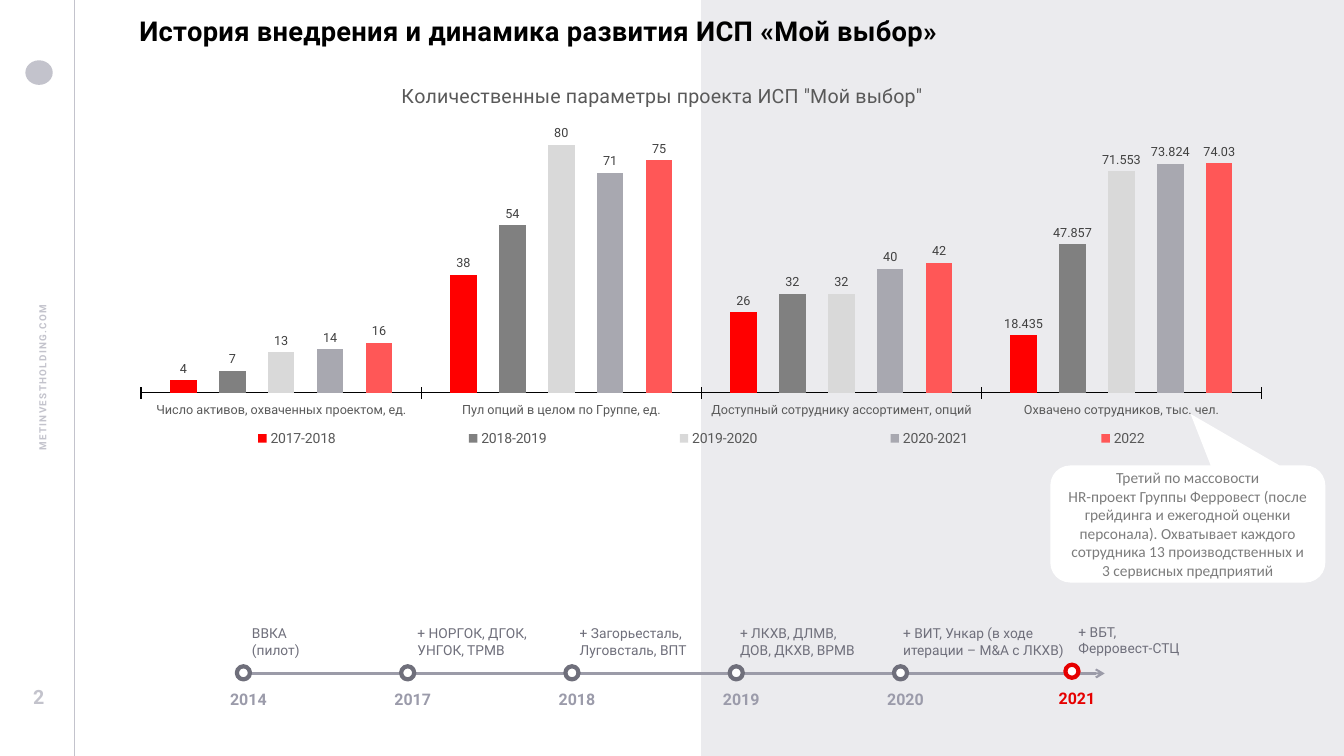
import dataclasses

import pptx
import pptx.chart.data
import pptx.dml.color
import pptx.enum.chart
import pptx.enum.shapes
import pptx.enum.text
import pptx.oxml.ns
import pptx.oxml.xmlchemy
import pptx.util

Cm = pptx.util.Cm
Pt = pptx.util.Pt
qn = pptx.oxml.ns.qn
new_element = pptx.oxml.xmlchemy.OxmlElement
Align = pptx.enum.text.PP_ALIGN
Anchor = pptx.enum.text.MSO_ANCHOR
Shape = pptx.enum.shapes.MSO_SHAPE

COLOURS = {
    "white": "FFFFFF", "black": "000000", "band": "EBEBEE", "side": "C3C3CC",
    "year": "9B9BAA", "note": "6F6F7B", "axis": "9B9BA8", "current": "E60000",
    "callout": "7C7C7C", "chart text": "595959", "value": "404040",
}


@dataclasses.dataclass
class TextStyle:
    size: float
    colour: str
    bold: bool = False
    name: str = "Roboto"
    align: Align = Align.LEFT
    line_spacing: float | None = None
    tracking: int = 0


@dataclasses.dataclass
class Milestone:
    year: str
    lines: list[str]
    dot_left: float
    note_left: float
    note_width: float
    note_inset: float = 0.08
    current: bool = False


@dataclasses.dataclass
class Season:
    name: str
    values: list[float]
    colour: str


def rgb(colour: str) -> pptx.dml.color.RGBColor:
    return pptx.dml.color.RGBColor.from_string(colour)


def set_font(font, style: TextStyle) -> None:
    font.name, font.size, font.bold = style.name, Pt(style.size), style.bold
    font.color.rgb = rgb(COLOURS[style.colour])


def write(box, lines: list[str], style: TextStyle, insets: tuple[float, ...], anchor=Anchor.TOP) -> None:
    frame = box.text_frame
    frame.word_wrap = True
    frame.auto_size = pptx.enum.text.MSO_AUTO_SIZE.NONE
    frame.vertical_anchor = anchor
    frame.margin_left, frame.margin_top, frame.margin_right, frame.margin_bottom = map(Cm, insets)
    frame.text = "\n".join(lines)
    for para in frame.paragraphs:
        para.alignment = style.align
        if style.line_spacing:
            para.line_spacing = style.line_spacing
        set_font(para.font, style)
    if style.tracking:
        for properties in box.element.iter(qn("a:defRPr")):
            properties.set("spc", str(style.tracking))


def add_text(page, place: tuple[float, ...], lines: list[str], style: TextStyle,
             insets: tuple[float, ...] = (0, 0, 0, 0), anchor=Anchor.TOP):
    box = page.shapes.add_textbox(*map(Cm, place))
    write(box, lines, style, insets, anchor)
    return box


def add_shape(page, kind: Shape, place: tuple[float, ...], fill: str, line: str | None = None):
    shape = page.shapes.add_shape(kind, *map(Cm, place))
    shape.shadow.inherit = False
    shape.fill.solid()
    shape.fill.fore_color.rgb = rgb(COLOURS[fill])
    if line:
        shape.line.color.rgb = rgb(COLOURS[line])
        shape.line.width = Pt(3)
    else:
        shape.line.fill.background()
    return shape


def add_line(page, ends: tuple[float, ...], colour: str, width: float, arrow: bool = False) -> None:
    line = page.shapes.add_connector(pptx.enum.shapes.MSO_CONNECTOR.STRAIGHT, *map(Cm, ends))
    line.line.color.rgb = rgb(COLOURS[colour])
    line.line.width = Pt(width)
    properties = line.element.find(qn("p:spPr"))
    if arrow:
        end = new_element("a:tailEnd")
        end.set("type", "arrow")
        properties.find(qn("a:ln")).append(end)
    properties.append(new_element("a:effectLst"))


def set_layout(parent, index: int, inner: bool = False, **places: float) -> None:
    for old in parent.findall(qn("c:layout")):
        parent.remove(old)
    layout = new_element("c:layout")
    manual = new_element("c:manualLayout")
    layout.append(manual)
    settings = {"layoutTarget": "inner"} if inner else {}
    settings |= {"xMode": "edge", "yMode": "edge"} | places
    for tag, value in settings.items():
        item = new_element(f"c:{tag}")
        item.set("val", str(value))
        manual.append(item)
    parent.insert(index, layout)


def add_seasons_chart(page, categories: list[str], seasons: list[Season]) -> None:
    data = pptx.chart.data.CategoryChartData()
    data.categories = categories
    for season in seasons:
        data.add_series(season.name, season.values)
    place = map(Cm, (2.97, 1.47, 29.41, 10.03))
    kind = pptx.enum.chart.XL_CHART_TYPE.COLUMN_CLUSTERED
    chart = page.shapes.add_chart(kind, *place, data).chart
    set_font(chart.font, TextStyle(10, "black"))

    chart.has_title = True
    title = chart.chart_title.text_frame
    title.text = "Количественные параметры проекта ИСП \"Мой выбор\""
    set_font(title.paragraphs[0].font, TextStyle(14, "chart text"))

    plot = chart.plots[0]
    plot.gap_width, plot.overlap, plot.vary_by_categories = 219, -85, False
    for series, season in zip(plot.series, seasons):
        series.format.fill.solid()
        series.format.fill.fore_color.rgb = rgb(season.colour)
        labels = series.data_labels
        labels.show_value = True
        labels.position = pptx.enum.chart.XL_LABEL_POSITION.OUTSIDE_END
        set_font(labels.font, TextStyle(9, "value"))

    values = chart.value_axis
    values.visible = values.has_major_gridlines = False
    values.minimum_scale, values.maximum_scale = 0, 90
    axis = chart.category_axis
    axis.major_tick_mark = pptx.enum.chart.XL_TICK_MARK.CROSS
    axis.format.line.color.rgb = rgb(COLOURS["black"])
    axis.format.line.width = Pt(1)
    set_font(axis.tick_labels.font, TextStyle(9, "chart text"))

    chart.has_legend = True
    chart.legend.position = pptx.enum.chart.XL_LEGEND_POSITION.BOTTOM
    chart.legend.include_in_layout = False
    set_font(chart.legend.font, TextStyle(10, "chart text"))

    root = chart.element.find(qn("c:chart"))
    set_layout(root.find(qn("c:title")), 1, x=0.24, y=0.05)
    set_layout(root.find(qn("c:plotArea")), 0, inner=True, x=0.02, y=0.14, w=0.96, h=0.7)
    set_layout(root.find(qn("c:legend")), 1, x=0.01, y=0.92, w=0.98, h=0.07)


def add_milestone(page, stop: Milestone) -> None:
    lift = 0.04 if stop.current else 0
    add_shape(page, Shape.OVAL, (stop.dot_left, 16.79 - lift, 0.33, 0.33), "white",
              "current" if stop.current else "note")
    year_style = TextStyle(11.4, "current" if stop.current else "year", bold=True, line_spacing=1.3)
    add_text(page, (stop.dot_left - 0.17, 17.16 - lift, 1.37, 0.79), [stop.year], year_style,
             (0, 0.08, 0.08, 0.08))
    add_text(page, (stop.note_left, 15.67 - lift, stop.note_width, 0.99), stop.lines,
             TextStyle(9.8, "note"), (stop.note_inset, 0.08, 0.08, 0.08))


CATEGORIES = ["Число активов, охваченных проектом, ед.", "Пул опций в целом по Группе, ед.",
              "Доступный сотруднику ассортимент, опций", "Охвачено сотрудников, тыс. чел."]
SEASONS = [
    Season("2017-2018", [4, 38, 26, 18.435], "FF0000"),
    Season("2018-2019", [7, 54, 32, 47.857], "808080"),
    Season("2019-2020", [13, 80, 32, 71.553], "D9D9D9"),
    Season("2020-2021", [14, 71, 40, 73.824], "A8A8B0"),
    Season("2022", [16, 75, 42, 74.03], "FF5757"),
]
FIRST_DOT, DOT_STEP = 5.97, 4.14
MILESTONES = [
    Milestone("2014", ["ВВКА", "(пилот)"], FIRST_DOT, 6.27, 1.85),
    Milestone("2017", ["+ НОРГОК, ДГОК,", "УНГОК, ТРМВ"], FIRST_DOT + DOT_STEP, 10.44, 3.15),
    Milestone("2018", ["+ Загорьесталь,", "Луговсталь, ВПТ"], FIRST_DOT + 2 * DOT_STEP, 14.53, 3.15),
    Milestone("2019", ["+ ЛКХВ, ДЛМВ, ДОВ, ДКХВ, ВРМВ"], FIRST_DOT + 3 * DOT_STEP, 18.57, 3.15),
    Milestone("2020", ["+ ВИТ, Ункар (в ходе итерации – M&A с ЛКХВ)"],
              FIRST_DOT + 4 * DOT_STEP, 22.76, 4.27, 0),
    Milestone("2021", ["+ ВБТ,", "Ферровест-СТЦ"], 26.85, 27.18, 2.84, 0, current=True),
]


def main() -> None:
    deck = pptx.Presentation()
    deck.slide_width, deck.slide_height = Cm(33.87), Cm(19.05)
    page = deck.slides.add_slide(deck.slide_layouts[5])

    # Title over the grey band
    title = page.shapes.title
    title.left, title.top, title.width, title.height = map(Cm, (3.51, 0.36, 20.75, 1.19))
    write(title, ["История внедрения и динамика развития ИСП «Мой выбор»"],
          TextStyle(19.5, "black", bold=True, tracking=20), (0, 0, 0, 0))
    band = add_shape(page, Shape.RECTANGLE, (17.67, 0, 16.2, 19.05), "band")
    title.element.addprevious(band.element)

    # Left margin: emblem, address, rule and page number
    add_shape(page, Shape.OVAL, (0.64, 1.52, 0.69, 0.62), "side")
    address = add_text(page, (-6.6, 9.17, 15.19, 0.69), ["METINVESTHOLDING.COM"],
                       TextStyle(7, "side", bold=True, align=Align.CENTER, line_spacing=1.5, tracking=100),
                       anchor=Anchor.MIDDLE)
    address.rotation = 270
    add_line(page, (1.88, 19.05, 1.88, 0), "side", 0.5)
    add_text(page, (0, 17.12, 1.96, 0.86), ["2"],
             TextStyle(14, "side", bold=True, align=Align.CENTER), (0.25, 0.13, 0.25, 0.13))

    # Timeline
    add_line(page, (5.97, 16.97, 27.84, 16.97), "axis", 1.5, arrow=True)
    for stop in MILESTONES:
        add_milestone(page, stop)

    # Callout and chart
    callout = add_shape(page, Shape.ROUNDED_RECTANGULAR_CALLOUT, (26.47, 11.73, 6.93, 2.95), "white")
    for index, value in enumerate((0.01, -0.94, 0.17)):
        callout.adjustments[index] = value
    write(callout, ["Третий по массовости",
                    "HR-проект Группы Ферровест (после грейдинга и ежегодной оценки персонала). "
                    "Охватывает каждого сотрудника 13 производственных и",
                    "3 сервисных предприятий"],
          TextStyle(11, "callout", name="Calibri", align=Align.CENTER), (0.25, 0.13, 0.25, 0.13),
          Anchor.MIDDLE)
    add_seasons_chart(page, CATEGORIES, SEASONS)
    deck.save("out.pptx")


if __name__ == "__main__":
    main()
